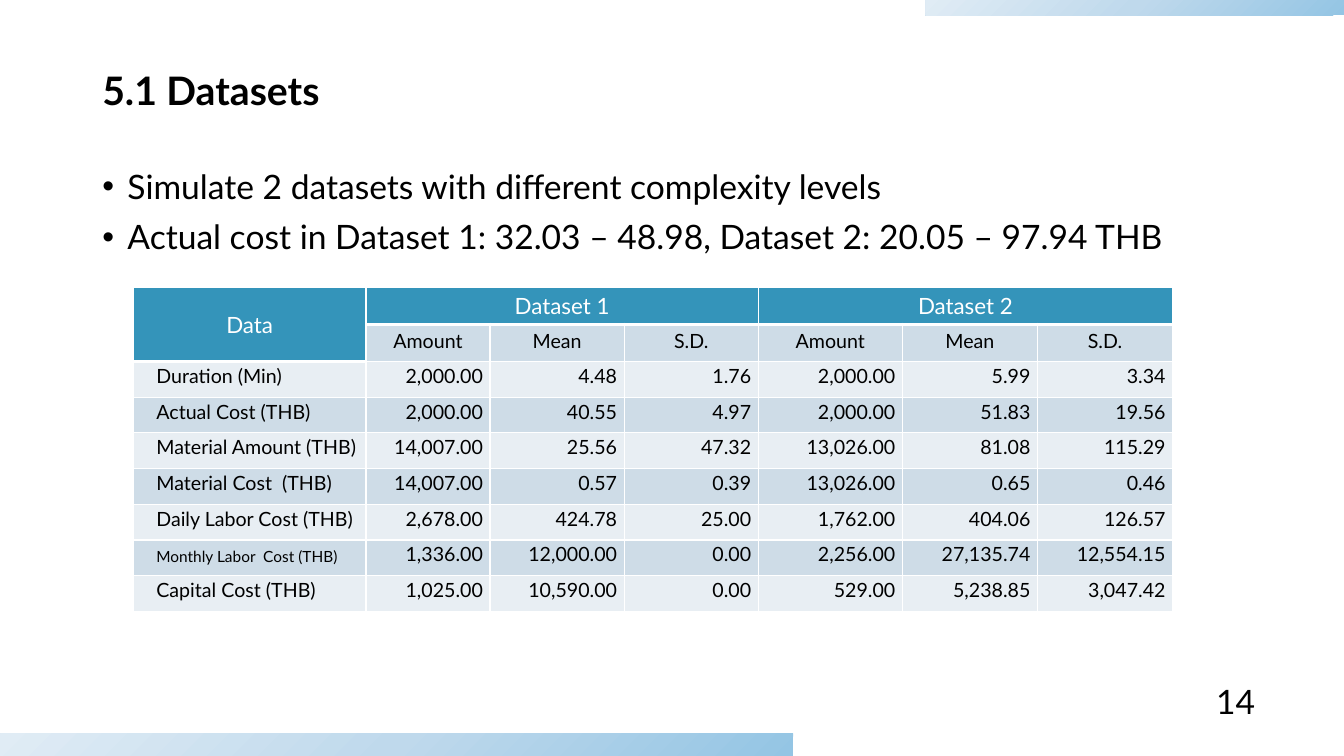
import copy

import pptx
import pptx.dml.color
import pptx.enum.shapes
import pptx.enum.text
import pptx.oxml.ns
import pptx.util
from lxml import etree

Pt = pptx.util.Pt
RGBColor = pptx.dml.color.RGBColor
ALIGN = pptx.enum.text.PP_ALIGN
ANCHOR = pptx.enum.text.MSO_ANCHOR
qn = pptx.oxml.ns.qn

FONT = "Lato"
BLACK = RGBColor(0x00, 0x00, 0x00)
WHITE = RGBColor(0xFF, 0xFF, 0xFF)
HEADER_BLUE = RGBColor(0x34, 0x94, 0xBA)
BAND_DARK = RGBColor(0xCE, 0xDC, 0xE7)
BAND_LIGHT = RGBColor(0xE8, 0xEE, 0xF3)
BAR_STOPS = [
    (0, RGBColor(0x94, 0xC5, 0xE4)),
    (0.5, RGBColor(0xBF, 0xD9, 0xEC)),
    (1, RGBColor(0xE0, 0xEC, 0xF5)),
]

BULLETS = [
    "Simulate 2 datasets with different complexity levels",
    "Actual cost in Dataset 1: 32.03 – 48.98, Dataset 2: 20.05 – 97.94 THB",
]
COLUMN_WIDTHS = [166.3, 88.6, 95.8, 95.8, 103, 96.5, 96.5]
HEADER_HEIGHT, ROW_HEIGHT = 26.4, 25.5
MEASURES = ["Amount", "Mean", "S.D."]
DATA_ROWS = [
    ["Duration (Min)", "2,000.00", "4.48", "1.76", "2,000.00", "5.99", "3.34"],
    ["Actual Cost (THB)", "2,000.00", "40.55", "4.97", "2,000.00", "51.83", "19.56"],
    ["Material Amount (THB)", "14,007.00", "25.56", "47.32", "13,026.00", "81.08", "115.29"],
    ["Material Cost  (THB)", "14,007.00", "0.57", "0.39", "13,026.00", "0.65", "0.46"],
    ["Daily Labor Cost (THB)", "2,678.00", "424.78", "25.00", "1,762.00", "404.06", "126.57"],
    ["Monthly Labor  Cost (THB)", "1,336.00", "12,000.00", "0.00", "2,256.00", "27,135.74", "12,554.15"],
    ["Capital Cost (THB)", "1,025.00", "10,590.00", "0.00", "529.00", "5,238.85", "3,047.42"],
]
SMALL_LABEL = "Monthly Labor  Cost (THB)"


def write_text(frame, lines, size, color=BLACK, bold=False, align=ALIGN.LEFT,
               spacing=None, gap=0, bullet=False, first_indent=0):
    """Fill a text frame with one paragraph for each line."""
    for index, line in enumerate(lines):
        para = frame.add_paragraph() if index else frame.paragraphs[0]
        para.alignment = align
        properties = para._p.get_or_add_pPr()
        if bullet:
            properties.set("marL", str(Pt(18)))
            properties.set("indent", str(Pt(-18)))
            etree.SubElement(properties, qn("a:buFont"), typeface="Arial")
            etree.SubElement(properties, qn("a:buChar"), char="•")
        elif first_indent:
            properties.set("indent", str(Pt(first_indent)))
        if spacing:
            para.line_spacing = spacing
        if index and gap:
            para.space_before = Pt(gap)
        span = para.add_run()
        span.text = line
        span.font.name = FONT
        span.font.size = Pt(size)
        span.font.bold = bold
        span.font.color.rgb = color


def add_text(page, lines, left, top, width, height, anchor=ANCHOR.TOP, **text_format):
    box = page.shapes.add_textbox(Pt(left), Pt(top), Pt(width), Pt(height))
    box.text_frame.word_wrap = True
    box.text_frame.vertical_anchor = anchor
    write_text(box.text_frame, lines, **text_format)


def add_gradient_bar(page, left, top, width, height):
    bar = page.shapes.add_shape(pptx.enum.shapes.MSO_SHAPE.RECTANGLE,
                                Pt(left), Pt(top), Pt(width), Pt(height))
    bar.shadow.inherit = False
    bar.line.fill.background()
    bar.fill.gradient()
    bar.fill.gradient_angle = 135
    stop_list = bar._element.spPr.find(qn("a:gradFill")).find(qn("a:gsLst"))
    stop_list.insert(1, copy.deepcopy(stop_list[0]))
    for stop, (position, color) in zip(bar.fill.gradient_stops, BAR_STOPS):
        stop.position = position
        stop.color.rgb = color


def set_borders(cell, top, bottom):
    """Draw white borders, with the top and bottom widths in points."""
    properties = cell._tc.get_or_add_tcPr()
    for tag, width in (("a:lnL", 1), ("a:lnR", 1), ("a:lnT", top), ("a:lnB", bottom)):
        line = etree.SubElement(properties, qn(tag), w=str(Pt(width)))
        fill = etree.SubElement(line, qn("a:solidFill"))
        etree.SubElement(fill, qn("a:srgbClr"), val=str(WHITE))


def style_cell(cell, row, column):
    """Set the borders and the fill; a thick line runs below the blue header."""
    header_rows = 1 if column else 2
    set_borders(cell, top=3 if row == header_rows else 1,
                bottom=3 if row == header_rows - 1 else 1)
    cell.fill.solid()
    if row < header_rows:
        cell.fill.fore_color.rgb = HEADER_BLUE
    else:
        cell.fill.fore_color.rgb = BAND_DARK if row % 2 else BAND_LIGHT


def fill_data_cell(cell, text, is_label):
    cell.vertical_anchor = ANCHOR.MIDDLE
    cell.margin_left = cell.margin_right = Pt(5)
    cell.margin_top = cell.margin_bottom = Pt(0)
    write_text(cell.text_frame, [text], size=11 if text == SMALL_LABEL else 14,
               align=ALIGN.LEFT if is_label else ALIGN.RIGHT,
               spacing=Pt(12), first_indent=11.5)


def add_dataset_table(page, left, top):
    row_heights = [HEADER_HEIGHT] + [ROW_HEIGHT] * (len(DATA_ROWS) + 1)
    table = page.shapes.add_table(
        len(row_heights), len(COLUMN_WIDTHS), Pt(left), Pt(top),
        Pt(sum(COLUMN_WIDTHS)), Pt(sum(row_heights))).table
    for column, width in zip(table.columns, COLUMN_WIDTHS):
        column.width = Pt(width)
    for row, height in zip(table.rows, row_heights):
        row.height = Pt(height)
    for row in range(len(row_heights)):
        for column in range(len(COLUMN_WIDTHS)):
            style_cell(table.cell(row, column), row, column)

    headings = [("Data", 0, (1, 0)), ("Dataset 1", 1, (0, 3)), ("Dataset 2", 4, (0, 6))]
    for heading, column, last in headings:
        cell = table.cell(0, column)
        cell.merge(table.cell(*last))
        write_text(cell.text_frame, [heading], size=16, color=WHITE, align=ALIGN.CENTER)
    table.cell(0, 0).vertical_anchor = ANCHOR.MIDDLE

    for column, measure in enumerate(MEASURES * 2, start=1):
        write_text(table.cell(1, column).text_frame, [measure], size=14, align=ALIGN.CENTER)
    for row, values in enumerate(DATA_ROWS, start=2):
        for column, value in enumerate(values):
            fill_data_cell(table.cell(row, column), value, is_label=column == 0)


def main():
    deck = pptx.Presentation()
    deck.slide_width, deck.slide_height = Pt(960), Pt(540)
    page = deck.slides.add_slide(deck.slide_layouts[6])
    add_gradient_bar(page, 0, 524, 566.6, 16)
    add_gradient_bar(page, 661, 0, 299, 10.8)
    add_text(page, ["5.1 Datasets"], 66, 39.6, 828, 53.3, anchor=ANCHOR.MIDDLE,
             size=28, bold=True, spacing=0.9)
    add_text(page, BULLETS, 66, 118, 870, 94.3, size=24, spacing=0.9, gap=10, bullet=True)
    add_text(page, ["14"], 687.6, 480.2, 216, 41, anchor=ANCHOR.MIDDLE,
             size=24, align=ALIGN.RIGHT)
    add_dataset_table(page, 95.2, 205.4)
    deck.save("out.pptx")


if __name__ == "__main__":
    main()
